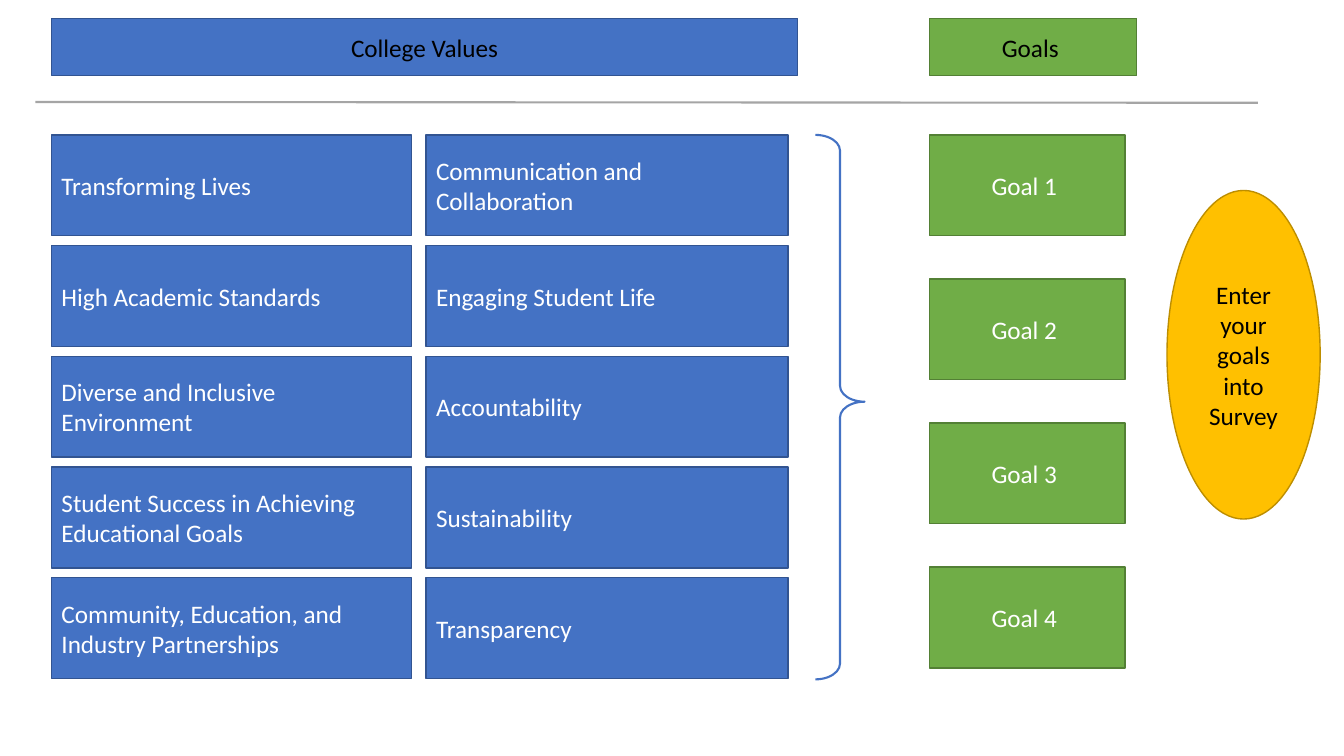
from lxml import etree
from pptx import Presentation
from pptx.dml.color import RGBColor
from pptx.enum.shapes import MSO_CONNECTOR, MSO_SHAPE as SHAPE
from pptx.enum.text import MSO_ANCHOR, PP_ALIGN as ALIGN
from pptx.oxml.ns import qn
from pptx.util import Cm, Pt

BLUE, BLUE_EDGE = RGBColor(0x44, 0x72, 0xC4), RGBColor(0x32, 0x54, 0x91)
GREEN, GREEN_EDGE = RGBColor(0x70, 0xAD, 0x47), RGBColor(0x53, 0x80, 0x35)
GOLD, GOLD_EDGE = RGBColor(0xFF, 0xC0, 0x00), RGBColor(0xBD, 0x8E, 0x00)
GRAY = RGBColor(0xA5, 0xA5, 0xA5)
BLACK, WHITE = RGBColor(0, 0, 0), RGBColor(0xFF, 0xFF, 0xFF)

VALUES_LEFT, GOALS_LEFT = 1.3, 23.42
GRID_TOP, BOX_HEIGHT = 3.4, 2.54
VALUE_PITCH, GOAL_PITCH = 2.79, 3.63

prs = Presentation()
prs.slide_width, prs.slide_height = Cm(33.87), Cm(19.05)
slide = prs.slides.add_slide(prs.slide_layouts[6])


def add_label(text, left, top, width, height, fill, edge, color,
              align=ALIGN.CENTER, kind=SHAPE.RECTANGLE):
    """Add a filled shape with its text; lengths are in centimetres."""
    label = slide.shapes.add_shape(kind, Cm(left), Cm(top), Cm(width), Cm(height))
    label.shadow.inherit = False
    label.fill.solid()
    label.fill.fore_color.rgb = fill
    label.line.color.rgb = edge
    label.line.width = Pt(1)
    frame = label.text_frame
    frame.word_wrap = True
    frame.vertical_anchor = MSO_ANCHOR.MIDDLE
    paragraph = frame.paragraphs[0]
    paragraph.text = text
    paragraph.alignment = align
    paragraph.font.name = "Calibri"
    paragraph.font.size = Pt(18)
    paragraph.font.color.rgb = color


# Headings and the rule below them
add_label("College Values", VALUES_LEFT, 0.46, 18.8, 1.45, BLUE, BLUE_EDGE, BLACK)
add_label("Goals ", GOALS_LEFT, 0.46, 5.23, 1.45, GREEN, GREEN_EDGE, BLACK)

heading_rule = slide.shapes.add_connector(
    MSO_CONNECTOR.STRAIGHT, Cm(0.89), Cm(2.57), Cm(31.7), Cm(2.59))
heading_rule.line.color.rgb = GRAY
heading_rule.line.width = Pt(1.5)
etree.SubElement(heading_rule._element.spPr, qn("a:effectLst"))

# Values in two columns
value_columns = [
    (VALUES_LEFT, 9.07, ["Transforming Lives", "High Academic Standards",
                         "Diverse and Inclusive Environment",
                         "Student Success in Achieving Educational Goals",
                         "Community, Education, and Industry Partnerships"]),
    (10.74, 9.12, ["Communication and Collaboration", "Engaging Student Life",
                   "Accountability", "Sustainability", "Transparency"]),
]
for left, width, values in value_columns:
    for row, value in enumerate(values):
        add_label(value, left, GRID_TOP + row * VALUE_PITCH, width, BOX_HEIGHT,
                  BLUE, BLUE_EDGE, WHITE, ALIGN.LEFT)

# Brace leading from the values to the goals
brace = slide.shapes.add_shape(
    SHAPE.RIGHT_BRACE, Cm(20.55), Cm(GRID_TOP), Cm(1.24), Cm(13.72))
brace.adjustments[0], brace.adjustments[1] = 0.32, 0.49
brace.shadow.inherit = False
brace.fill.background()
brace.line.color.rgb = BLUE
brace.line.width = Pt(1.5)

# Goals and the call to action
for row in range(4):
    add_label(f"Goal {row + 1} ", GOALS_LEFT, GRID_TOP + row * GOAL_PITCH, 4.93,
              BOX_HEIGHT, GREEN, GREEN_EDGE, WHITE)

add_label("Enter your goals into Survey", 29.41, 4.8, 3.86, 8.28,
          GOLD, GOLD_EDGE, BLACK, kind=SHAPE.OVAL)

prs.save("out.pptx")
